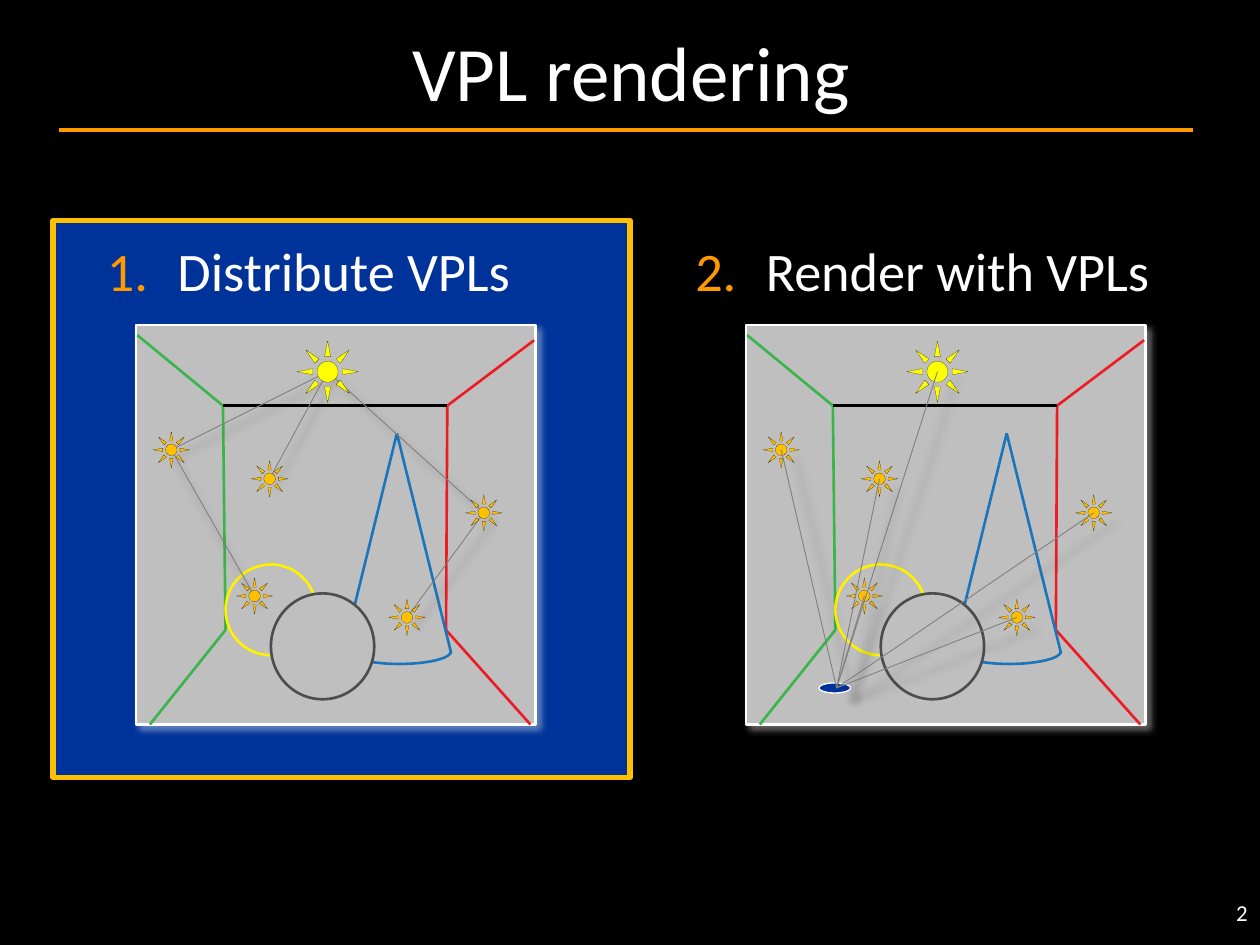
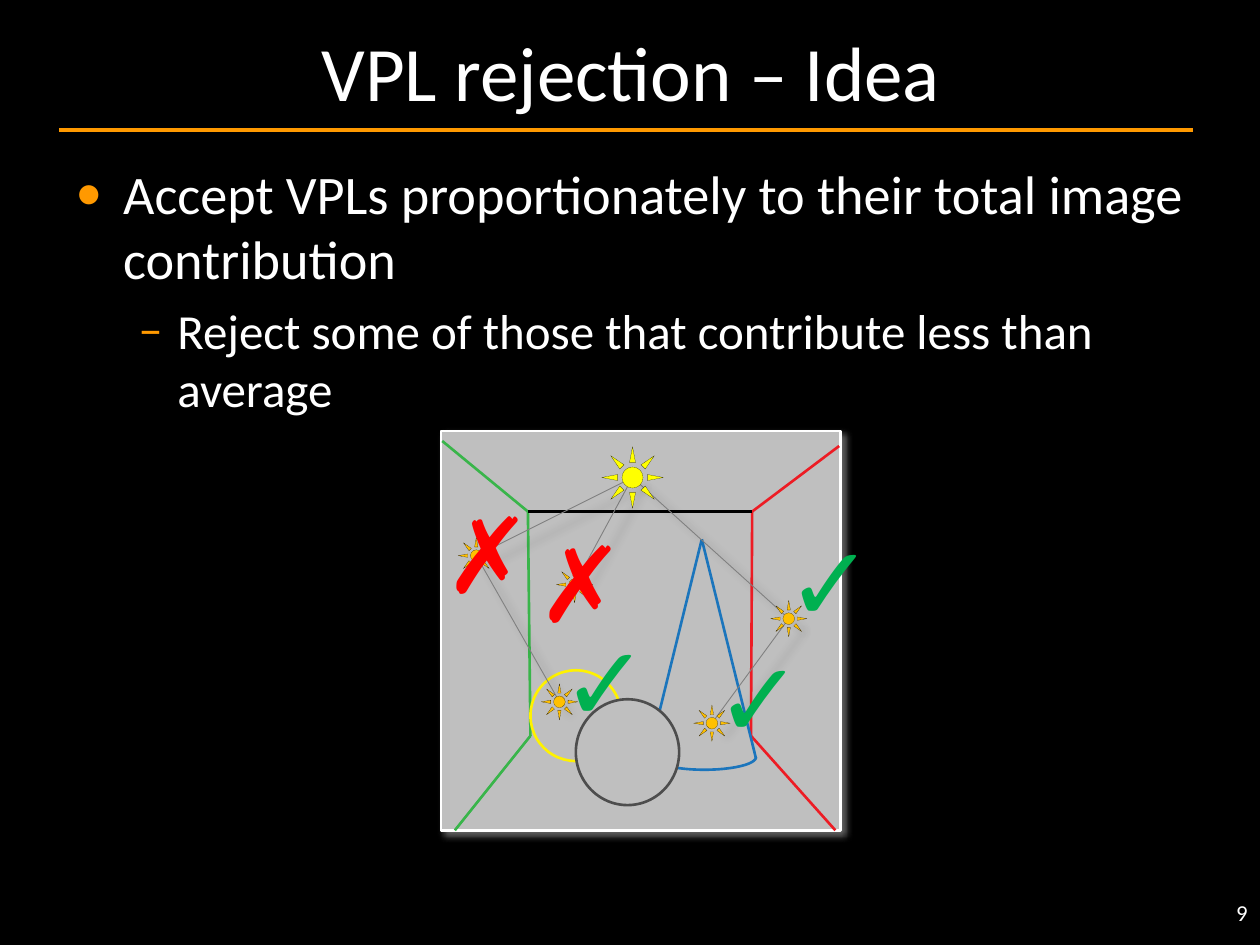
from math import cos, pi, sin

from lxml.etree import SubElement
from pptx import Presentation
from pptx.dml.color import RGBColor
from pptx.enum.shapes import MSO_CONNECTOR, MSO_SHAPE
from pptx.enum.text import MSO_ANCHOR, PP_ALIGN
from pptx.oxml.ns import qn
from pptx.util import Pt

PX = 9144  # 100 px to the inch
BLACK, WHITE, ORANGE, GOLD = "000000", "FFFFFF", "FF9900", "FFC000"
BLUE, GREY, RAY = "003399", "BFBFBF", "808080"
RED, GREEN, CONE = "ED1C24", "39B54A", "1B75BC"

# Places inside a scene, measured from its top left corner
SIDE = 317
SUN = (152, 37)
LEFT, MID, RIGHT, BALL, LOW = LAMPS = [
    (28, 99), (106, 122), (276, 149), (94, 215), (215, 232)]
EYE = (72, 288)
EDGES = [
    ((11, 317), (71, 242), GREEN), ((313, 317), (246, 242), RED),
    ((246, 242), (247, 64), RED), ((247, 64), (316, 12), RED),
    ((71, 242), (69, 64), GREEN), ((69, 64), (1, 8), GREEN),
    ((69, 64), (247, 64), BLACK), ((207, 86), (250, 260), CONE),
]
PATHS = [(SUN, RIGHT), (RIGHT, LOW), (SUN, MID), (SUN, LEFT), (LEFT, BALL)]
MARKS = [
    ("✗", -7, 41, "FF0000"), ("✓", 86, 142, "00B050"),
    ("✗", 67, 64, "FF0000"), ("✓", 264, 63, "00B050"),
    ("✓", 208, 155, "00B050"),
]


def emu(*vals):
    return [round(v * PX) for v in vals]


def rgb(code):
    return RGBColor.from_string(code)


def move(org, spot):
    return org[0] + spot[0], org[1] + spot[1]


def pen(item, color, width):
    item.line.color.rgb = rgb(color)
    item.line.width = Pt(width)


def glow(item, color, **attrs):
    """Give the item an outer shadow at 40% opacity."""
    effects = SubElement(item._element.spPr, qn("a:effectLst"))
    outer = SubElement(effects, qn("a:outerShdw"), rotWithShape="0", **attrs)
    tint = SubElement(outer, qn("a:srgbClr"), val=color)
    SubElement(tint, qn("a:alpha"), val="40000")


def line(slide, start, end, color, width=1.5, shade=False):
    item = slide.shapes.add_connector(
        MSO_CONNECTOR.STRAIGHT, *emu(*start, *end))
    pen(item, color, width)
    if shade:
        glow(item, BLACK, blurRad="63500", sx="102000", sy="102000",
             algn="ctr")
    else:
        SubElement(item._element.spPr, qn("a:effectLst"))


def shape(slide, kind, box, fill, color, width=1.5, shade=False):
    item = slide.shapes.add_shape(kind, *emu(*box))
    if fill:
        item.fill.solid()
        item.fill.fore_color.rgb = rgb(fill)
    else:
        item.fill.background()
    pen(item, color, width)
    if shade:
        glow(item, WHITE, blurRad="50800", dist="38100", dir="2700000",
             algn="tl")
    else:
        item.shadow.inherit = False
    return item


def bullet(par, sign, left, hang, start=1):
    """Hang an orange sign, or a number when sign is None."""
    props = par._p.get_or_add_pPr()
    props.set("marL", str(left * PX))
    props.set("indent", str(-hang * PX))
    tint = SubElement(props, qn("a:buClr"))
    SubElement(tint, qn("a:srgbClr"), val=ORANGE)
    if sign:
        SubElement(props, qn("a:buFont"), typeface="Calibri")
        SubElement(props, qn("a:buChar"), char=sign)
    else:
        SubElement(props, qn("a:buFont"), typeface="+mj-lt")
        SubElement(props, qn("a:buAutoNum"), type="arabicPeriod",
                   startAt=str(start))


def write(par, text, size=31, color=WHITE, font="Calibri",
          align=PP_ALIGN.LEFT, mark=None):
    par.alignment = align
    if mark:
        par.space_before = Pt(round(size * 0.2, 1))
        bullet(par, **mark)
    run = par.add_run()
    run.text = text
    run.font.size = Pt(size)
    run.font.name = font
    run.font.color.rgb = rgb(color)


def frame(slide, box, wrap=True, anchor=MSO_ANCHOR.TOP):
    body = slide.shapes.add_textbox(*emu(*box)).text_frame
    body.word_wrap = wrap
    body.vertical_anchor = anchor
    return body


def label(slide, text, box, wrap=True, anchor=MSO_ANCHOR.TOP, **look):
    write(frame(slide, box, wrap, anchor).paragraphs[0], text, **look)


def page(deck, title, number):
    """Add a slide with the shared title, rule and page number."""
    slide = deck.slides.add_slide(deck.slide_layouts[6])
    line(slide, (47, 103), (947, 103), ORANGE, 2.25)
    label(slide, title, (56, 9, 890, 94), anchor=MSO_ANCHOR.MIDDLE,
          size=44, align=PP_ALIGN.CENTER)
    label(slide, str(number), (767, 708, 233, 42), size=13,
          align=PP_ALIGN.RIGHT)
    return slide


def step(slide, text, box, start):
    label(slide, text, box,
          mark=dict(sign=None, left=56, hang=56, start=start))


def room(slide, org):
    """Draw the box with its cone and two balls."""
    shape(slide, MSO_SHAPE.RECTANGLE, (*org, SIDE, SIDE), GREY, WHITE,
          shade=True)
    for start, end, color in EDGES:
        line(slide, move(org, start), move(org, end), color)
    shape(slide, MSO_SHAPE.OVAL, (*move(org, (71, 190)), 72, 72), None,
          "FFF200")
    line(slide, move(org, (207, 86)), move(org, (164, 261)), CONE)
    rim(slide, move(org, (209, 259)), 41, 10)
    shape(slide, MSO_SHAPE.OVAL, (*move(org, (107, 213)), 82, 84), GREY,
          "4D4D4D")


def rim(slide, mid, wide, deep, steps=24):
    """Draw the lower half of an ellipse."""
    turns = [pi * i / steps for i in range(steps + 1)]
    dots = [emu(mid[0] + wide * cos(t), mid[1] + deep * sin(t))
            for t in turns]
    path = slide.shapes.build_freeform(*dots[0])
    path.add_line_segments(dots[1:], close=False)
    item = path.convert_to_shape()
    item.fill.background()
    item.shadow.inherit = False
    pen(item, CONE, 1.5)


def rays(slide, org, pairs):
    for start, end in pairs:
        line(slide, move(org, start), move(org, end), RAY, 0.5, shade=True)


def lamp(slide, mid, size, fill, core):
    box = (mid[0] - size / 2, mid[1] - size / 2, size, size)
    item = shape(slide, MSO_SHAPE.SUN, box, fill, BLACK, 0.05)
    item.adjustments[0] = core


def lamps(slide, org):
    for spot in LAMPS:
        lamp(slide, move(org, spot), 29, GOLD, 0.34)
    lamp(slide, move(org, SUN), 49, "FFFF00", 0.33)


def spread(slide, org):
    """Draw a scene in which light paths place the lamps."""
    room(slide, org)
    rays(slide, org, PATHS)
    lamps(slide, org)


def gather(slide, org):
    """Draw a scene in which every lamp lights one point."""
    room(slide, org)
    lamps(slide, org)
    shape(slide, MSO_SHAPE.OVAL, (*move(org, (58, 284)), 25, 8), BLUE,
          WHITE, 0.75)
    rays(slide, org, [(spot, EYE) for spot in [SUN, *LAMPS]])


def render(deck):
    slide = page(deck, "VPL rendering", 2)
    shape(slide, MSO_SHAPE.RECTANGLE, (42, 175, 458, 442), BLUE, GOLD, 3)
    step(slide, "Distribute VPLs", (75, 183, 375, 108), 1)
    step(slide, "Render with VPLs", (542, 183, 400, 108), 2)
    spread(slide, (108, 258))
    gather(slide, (592, 258))


def reject(deck):
    slide = page(deck, "VPL rejection – Idea", 9)
    body = frame(slide, (50, 122, 910, 548))
    write(body.paragraphs[0],
          "Accept VPLs proportionately to their total image contribution",
          mark=dict(sign="•", left=38, hang=38))
    sub = body.add_paragraph()
    sub.level = 1
    write(sub, "Reject some of those that contribute less than average",
          size=28, mark=dict(sign="–", left=81, hang=31))
    org = (350, 342)
    spread(slide, org)
    for sign, left, top, color in MARKS:
        label(slide, sign, (*move(org, (left, top)), 80, 111), wrap=False,
              size=60, color=color, font="Arial")


def main():
    deck = Presentation()
    deck.slide_width, deck.slide_height = emu(1000, 750)
    back = deck.slide_master.background.fill
    back.solid()
    back.fore_color.rgb = rgb(BLACK)
    render(deck)
    reject(deck)
    deck.save("out.pptx")


if __name__ == "__main__":
    main()
